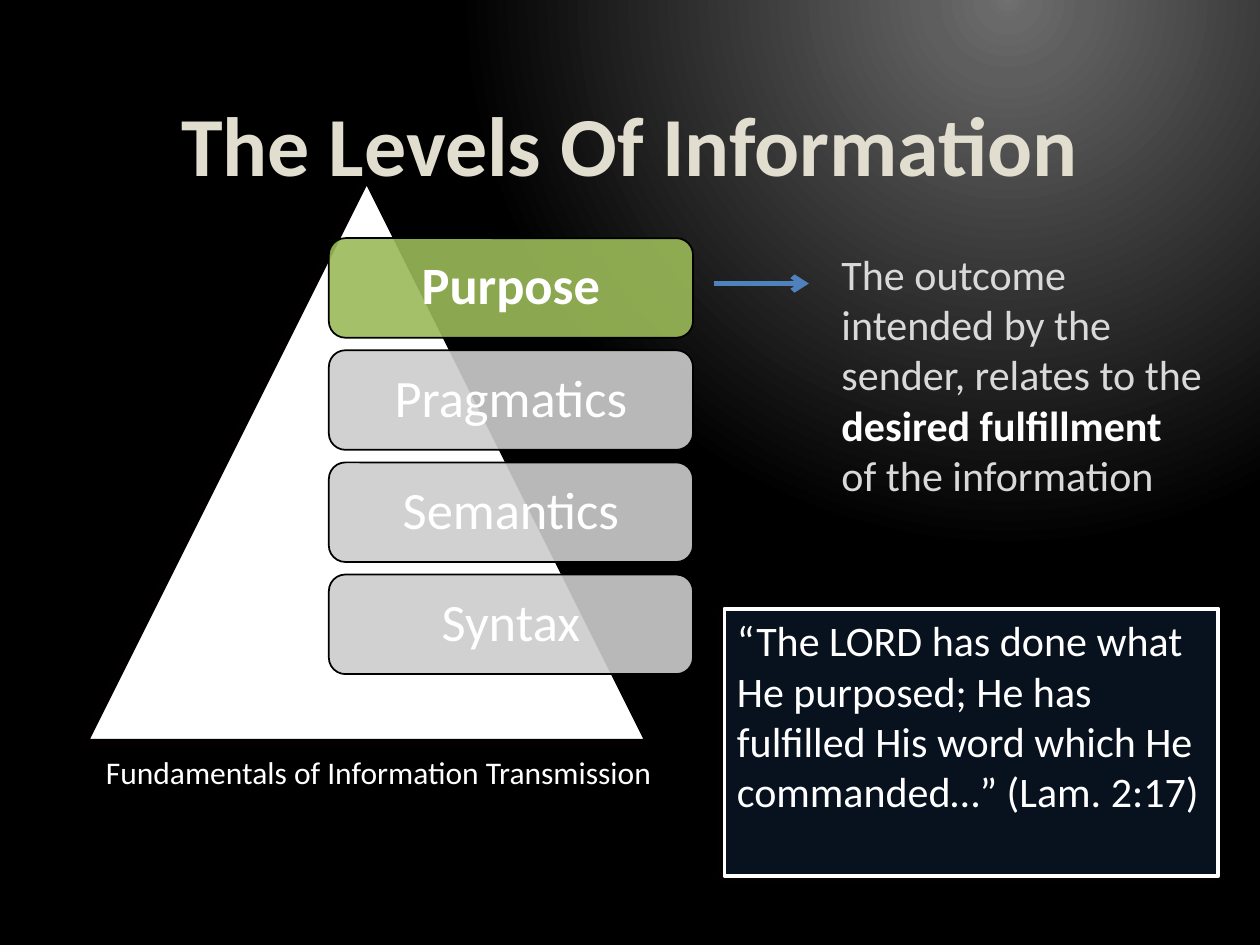
"""Build the slide on the levels of information."""
from dataclasses import dataclass

from lxml import etree
from pptx import Presentation
from pptx.dml.color import RGBColor
from pptx.enum.shapes import MSO_CONNECTOR, MSO_SHAPE
from pptx.enum.text import MSO_ANCHOR, PP_ALIGN
from pptx.oxml import parse_xml
from pptx.oxml.ns import nsdecls, qn
from pptx.util import Inches, Pt

LEFT, CENTER = PP_ALIGN.LEFT, PP_ALIGN.CENTER
TOP, MIDDLE, BOTTOM = MSO_ANCHOR.TOP, MSO_ANCHOR.MIDDLE, MSO_ANCHOR.BOTTOM
RECTANGLE, ROUNDED = MSO_SHAPE.RECTANGLE, MSO_SHAPE.ROUNDED_RECTANGLE
TRIANGLE = MSO_SHAPE.ISOSCELES_TRIANGLE
STRAIGHT = MSO_CONNECTOR.STRAIGHT

WHITE = RGBColor(0xFF, 0xFF, 0xFF)
BLACK = RGBColor(0x00, 0x00, 0x00)
CREAM = RGBColor(0xE1, 0xDE, 0xCF)
PALE = RGBColor(0xD9, 0xD9, 0xD9)
GREY = RGBColor(0xCC, 0xCC, 0xCC)
GREEN = RGBColor(0x9B, 0xBB, 0x59)
BLUE = RGBColor(0x4F, 0x81, 0xBD)
NAVY = RGBColor(0x08, 0x12, 0x1F)
SHADOW = RGBColor(0x1A, 0x00, 0x00)

FONT = "Calibri"
WIDTH, HEIGHT = 10, 7.5
GLOW = {0: "707070", 3: "696969", 10: "5E5E5E", 70: "000000", 100: "000000"}
LEVELS = ("Purpose", "Pragmatics", "Semantics", "Syntax")
LEVEL_TOP, LEVEL_PITCH = 1.89, 0.89


@dataclass(frozen=True)
class Box:
    """A rectangle in inches."""

    left: float
    top: float
    width: float
    height: float

    def lengths(self) -> tuple:
        """Give the four lengths for python-pptx."""
        return tuple(map(Inches, (self.left, self.top, self.width, self.height)))


@dataclass(frozen=True)
class Words:
    """A run of text with its look."""

    text: str
    size: float
    color: RGBColor = WHITE
    bold: bool = False


def paint_background(slide) -> None:
    """Fill the background with a glow from the upper right."""
    stops = "".join(
        f'<a:gs pos="{share * 1000}"><a:srgbClr val="{color}"/></a:gs>'
        for share, color in GLOW.items()
    )
    slide.element.cSld.insert(0, parse_xml(
        f'<p:bg {nsdecls("p", "a")}><p:bgPr><a:gradFill><a:gsLst>{stops}</a:gsLst>'
        '<a:path path="circle"><a:fillToRect l="60000" t="-3000" r="0" b="200000"/>'
        "</a:path></a:gradFill><a:effectLst/></p:bgPr></p:bg>"
    ))


def write(shape, words: list[Words], align=LEFT, anchor=TOP, spacing=None):
    """Write one paragraph into a shape."""
    frame = shape.text_frame
    frame.word_wrap, frame.vertical_anchor = True, anchor
    paragraph = frame.paragraphs[0]
    paragraph.alignment, paragraph.line_spacing = align, spacing
    for part in words:
        run = paragraph.add_run()
        run.text = part.text
        look = {"name": FONT, "size": Pt(part.size), "bold": part.bold}
        for name, value in look.items():
            setattr(run.font, name, value)
        run.font.color.rgb = part.color


def add_text(slide, box: Box, words: list[Words], align=LEFT, anchor=TOP) -> None:
    """Add a wrapped text box."""
    write(slide.shapes.add_textbox(*box.lengths()), words, align, anchor)


def add_panel(slide, kind, box: Box, fill: RGBColor, line: RGBColor, weight: float):
    """Add a filled and outlined shape without effects."""
    shape = slide.shapes.add_shape(kind, *box.lengths())
    shape.shadow.inherit = False
    shape.fill.solid()
    shape.fill.fore_color.rgb = fill
    shape.line.color.rgb = line
    shape.line.width = Pt(weight)
    return shape


def set_alpha(color, percent: int) -> None:
    """Make a colour element partly transparent."""
    etree.SubElement(color, qn("a:alpha"), val=str(percent * 1000))


def add_shadow(shape) -> None:
    """Give a shape a soft, dark shadow."""
    effects = shape.element.spPr.find(qn("a:effectLst"))
    shadow = etree.SubElement(
        effects, qn("a:outerShdw"), blurRad=str(Pt(3.1)), dist=str(Pt(2)),
        dir=str(150 * 60000), rotWithShape="0",
    )
    set_alpha(etree.SubElement(shadow, qn("a:srgbClr"), val=str(SHADOW)), 35)


def add_level(slide, row: int, name: str) -> None:
    """Add one level of the pyramid, with the first one highlighted."""
    current = row == 0
    box = Box(2.61, LEVEL_TOP + row * LEVEL_PITCH, 2.89, 0.79)
    shape = add_panel(slide, ROUNDED, box, GREEN if current else GREY, BLACK, 1)
    set_alpha(shape.element.spPr.find(qn("a:solidFill"))[0], 90)
    write(shape, [Words(name, 30, bold=current)], CENTER, MIDDLE, 0.9)


def add_arrow(slide, left: float, right: float, top: float) -> None:
    """Add a level arrow pointing right."""
    ends = map(Inches, (left, top, right, top))
    arrow = slide.shapes.add_connector(STRAIGHT, *ends)
    arrow.line.color.rgb = BLUE
    arrow.line.width = Pt(3)
    properties = arrow.element.spPr
    etree.SubElement(properties.find(qn("a:ln")), qn("a:tailEnd"), type="arrow")
    etree.SubElement(properties, qn("a:effectLst"))


def main() -> None:
    """Build and save the presentation."""
    presentation = Presentation()
    presentation.slide_width = Inches(WIDTH)
    presentation.slide_height = Inches(HEIGHT)
    slide = presentation.slides.add_slide(presentation.slide_layouts[6])
    paint_background(slide)

    title = Words("The Levels Of Information", 48, CREAM, True)
    title_box = Box(0.05 * WIDTH, 0.33, 0.9 * WIDTH, 1.25)
    add_text(slide, title_box, [title], CENTER, BOTTOM)
    caption = Words("Fundamentals of Information Transmission", 18)
    add_text(slide, Box(0.42, 5.93, 5.17, 0.4), [caption], CENTER)

    pyramid = add_panel(slide, TRIANGLE, Box(0.69, 1.44, 4.44, 4.44), WHITE, BLACK, 2.21)
    add_shadow(pyramid)
    for row, name in enumerate(LEVELS):
        add_level(slide, row, name)

    add_text(slide, Box(6.58, 1.92, 3.08, 2.52), [
        Words("The outcome intended by the sender, relates to the ", 24, PALE),
        Words("desired fulfillment ", 24, bold=True),
        Words("of the information", 24, PALE),
    ])
    add_arrow(slide, 5.67, 6.42, 2.25)

    quote = add_panel(slide, RECTANGLE, Box(5.75, 4.83, 3.92, 2.12), NAVY, WHITE, 2.21)
    add_shadow(quote)
    write(quote, [Words(
        "“The LORD has done what He purposed; He has fulfilled His word "
        "which He commanded…” (Lam. 2:17)", 24,
    )])
    presentation.save("out.pptx")


if __name__ == "__main__":
    main()
